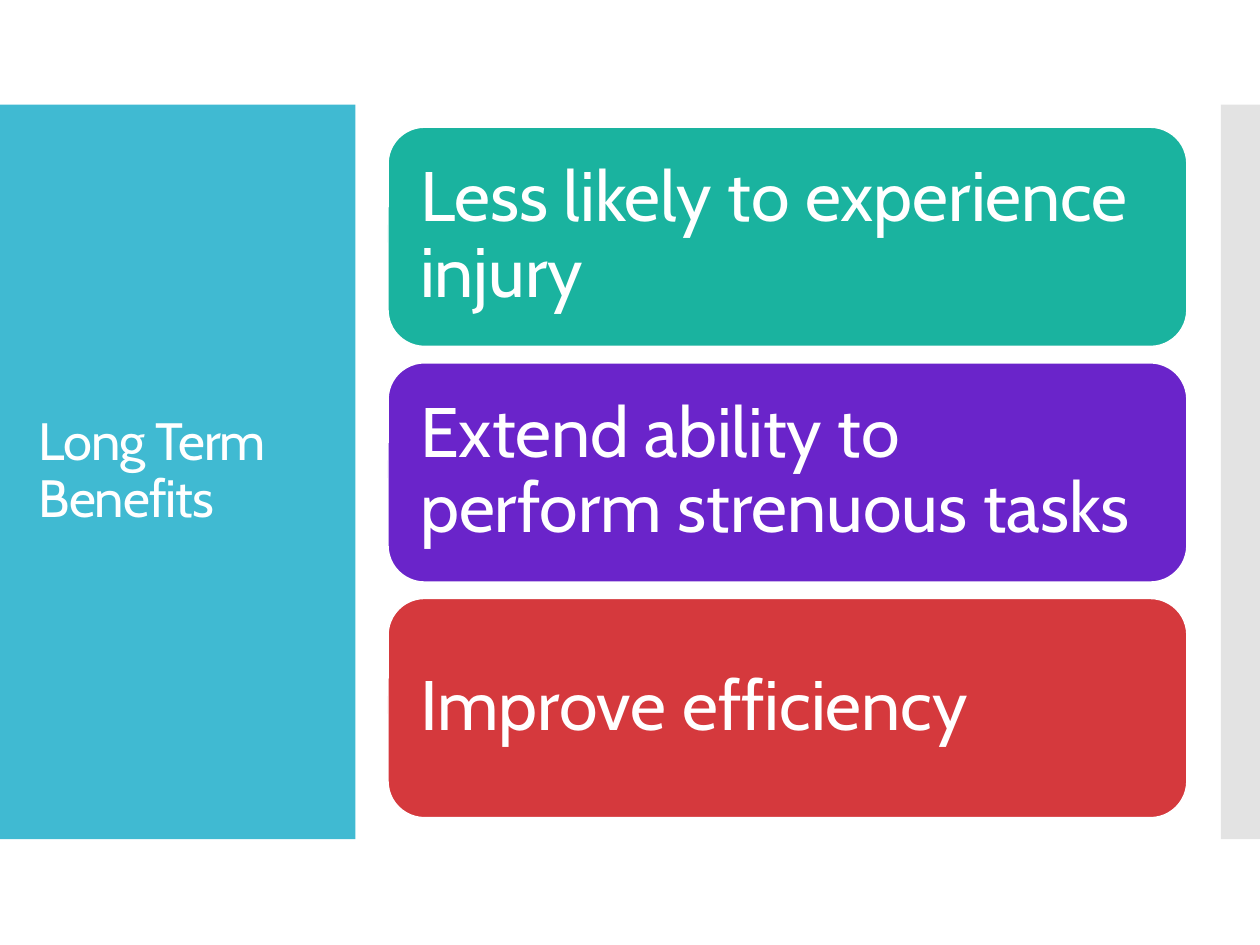
import pptx
import pptx.dml.color
import pptx.enum.shapes
import pptx.enum.text
import pptx.oxml
import pptx.oxml.ns
import pptx.util
from pptx.util import Inches

COLORS = {
    "white": "FFFFFF",
    "panel": "40BAD2",
    "strip": "C8C8C8",
    "teal": "1AB39F",
    "purple": "6A24CA",
    "red": "D5393D",
}
FONT = "Cabin"
BENEFITS = [
    ("Less likely to experience injury", "teal"),
    ("Extend ability to perform strenuous tasks", "purple"),
    ("Improve efficiency", "red"),
]
CARD_TOP = 1.01
CARD_STEP = 1.87


def rgb(name):
    return pptx.dml.color.RGBColor.from_string(COLORS[name])


def add_filled_shape(slide, kind, left, top, width, height, color):
    shape = slide.shapes.add_shape(
        kind, Inches(left), Inches(top), Inches(width), Inches(height)
    )
    shape.shadow.inherit = False
    shape.fill.solid()
    shape.fill.fore_color.rgb = rgb(color)
    shape.line.fill.background()
    return shape


def set_opacity(shape, percent):
    color = shape.fill._xPr.find(".//" + pptx.oxml.ns.qn("a:srgbClr"))
    alpha = pptx.oxml.parse_xml(
        f'<a:alpha {pptx.oxml.ns.nsdecls("a")} val="{percent * 1000}"/>'
    )
    color.append(alpha)


def write_text(shape, text, size):
    frame = shape.text_frame
    frame.word_wrap = True
    frame.vertical_anchor = pptx.enum.text.MSO_ANCHOR.MIDDLE
    paragraph = frame.paragraphs[0]
    paragraph.alignment = pptx.enum.text.PP_ALIGN.LEFT
    paragraph.line_spacing = 0.9
    run = paragraph.add_run()
    run.text = text
    run.font.size = pptx.util.Pt(size)
    run.font.name = FONT
    run.font.color.rgb = rgb("white")
    return run


def add_title(slide, text):
    box = slide.shapes.add_textbox(
        Inches(0.21), Inches(1.23), Inches(2.42), Inches(5.03)
    )
    run = write_text(box, text, 30)
    run.font._element.set("spc", "-60")


def add_benefit_card(slide, top, text, color):
    rounded = pptx.enum.shapes.MSO_SHAPE.ROUNDED_RECTANGLE
    card = add_filled_shape(slide, rounded, 3.08, top, 6.34, 1.74, color)
    card.line.color.rgb = rgb("white")
    card.line.width = pptx.util.Pt(0.85)
    frame = card.text_frame
    frame.margin_left = frame.margin_right = Inches(0.17)
    frame.margin_top = frame.margin_bottom = Inches(0.17)
    write_text(card, text, 40)


def main():
    presentation = pptx.Presentation()
    presentation.slide_width = Inches(10)
    presentation.slide_height = Inches(7.5)
    slide = presentation.slides.add_slide(presentation.slide_layouts[6])

    rectangle = pptx.enum.shapes.MSO_SHAPE.RECTANGLE
    add_filled_shape(slide, rectangle, 0, 0.83, 2.82, 5.83, "panel")
    strip = add_filled_shape(slide, rectangle, 9.69, 0.83, 0.31, 5.83, "strip")
    set_opacity(strip, 50)

    add_title(slide, "Long Term Benefits")
    for index, (text, color) in enumerate(BENEFITS):
        add_benefit_card(slide, CARD_TOP + index * CARD_STEP, text, color)

    presentation.save("out.pptx")


if __name__ == "__main__":
    main()
